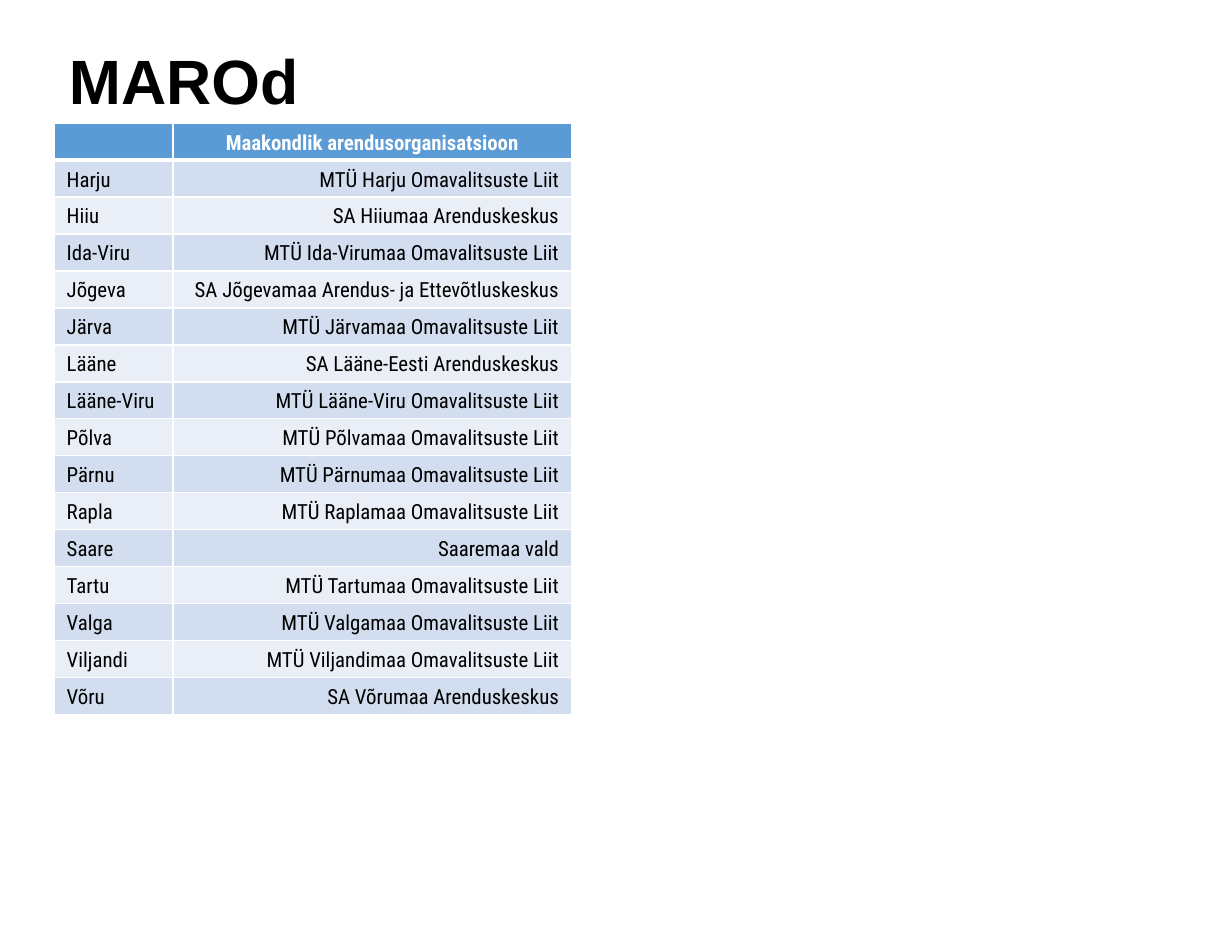
import pptx
import pptx.util
import pptx.dml.color
import pptx.enum.text
import pptx.oxml
import pptx.oxml.ns

Cm, Pt = pptx.util.Cm, pptx.util.Pt
RGBColor = pptx.dml.color.RGBColor
Align = pptx.enum.text.PP_ALIGN
Anchor = pptx.enum.text.MSO_ANCHOR

# Content
TITLE = "MAROd"
HEADER = ("", "Maakondlik arendusorganisatsioon")
COUNTIES = [
    ("Harju", "MTÜ Harju Omavalitsuste Liit"),
    ("Hiiu", "SA Hiiumaa Arenduskeskus"),
    ("Ida-Viru", "MTÜ Ida-Virumaa Omavalitsuste Liit"),
    ("Jõgeva", "SA Jõgevamaa Arendus- ja Ettevõtluskeskus"),
    ("Järva", "MTÜ Järvamaa Omavalitsuste Liit"),
    ("Lääne", "SA Lääne-Eesti Arenduskeskus"),
    ("Lääne-Viru", "MTÜ Lääne-Viru Omavalitsuste Liit"),
    ("Põlva", "MTÜ Põlvamaa Omavalitsuste Liit"),
    ("Pärnu", "MTÜ Pärnumaa Omavalitsuste Liit"),
    ("Rapla", "MTÜ Raplamaa Omavalitsuste Liit"),
    ("Saare", "Saaremaa vald"),
    ("Tartu", "MTÜ Tartumaa Omavalitsuste Liit"),
    ("Valga", "MTÜ Valgamaa Omavalitsuste Liit"),
    ("Viljandi", "MTÜ Viljandimaa Omavalitsuste Liit"),
    ("Võru", "SA Võrumaa Arenduskeskus"),
]
COLORS = {"text": "000000", "white": "FFFFFF", "header": "5B9BD5",
          "odd": "D2DEEF", "even": "EAEFF7"}
COLUMN_WIDTHS = (2.41, 8.09)
ROW_HEIGHT = 0.75


def color(name):
    return RGBColor.from_string(COLORS[name])


def set_font(para, name, size, bold, color_name):
    font = para.font
    font.name, font.size, font.bold = name, Pt(size), bold
    font.color.rgb = color(color_name)


def add_borders(cell, top, bottom):
    """Draw white borders; widths are in points."""
    properties = cell._tc.get_or_add_tcPr()
    for side, width in (("L", 1), ("R", 1), ("T", top), ("B", bottom)):
        properties.append(pptx.oxml.parse_xml(
            f'<a:ln{side} {pptx.oxml.ns.nsdecls("a")} w="{Pt(width)}">'
            f'<a:solidFill><a:srgbClr val="{COLORS["white"]}"/></a:solidFill>'
            f'</a:ln{side}>'))


def add_title(page):
    title = page.shapes.title
    title.left, title.top, title.width, title.height = Cm(1.4), Cm(0.9), Cm(22), Cm(1.8)
    frame = title.text_frame
    frame.text = TITLE
    frame.auto_size = pptx.enum.text.MSO_AUTO_SIZE.NONE
    frame.vertical_anchor = Anchor.TOP
    frame.margin_left = frame.margin_right = frame.margin_bottom = 0
    frame.margin_top = Cm(0.14)
    para = frame.paragraphs[0]
    para.alignment, para.line_spacing = Align.LEFT, 0.88
    set_font(para, "Arial", 36, True, "text")


def fill_cell(cell, text, row, column):
    is_header = row == 0
    add_borders(cell, 3 if row == 1 else 1, 3 if is_header else 1)
    cell.fill.solid()
    cell.fill.fore_color.rgb = color("header" if is_header else "odd" if row % 2 else "even")
    cell.vertical_anchor = Anchor.MIDDLE
    cell.margin_top = cell.margin_bottom = Cm(0.05)
    cell.text = text
    para = cell.text_frame.paragraphs[0]
    para.line_spacing = 1.1
    para.alignment = Align.CENTER if is_header else (Align.LEFT, Align.RIGHT)[column]
    set_font(para, "Roboto Condensed", 12, is_header, "white" if is_header else "text")
    if not text:
        # Keeps the empty cell from stretching its row
        para._p.get_or_add_endParaRPr().set("sz", "1200")


def add_county_table(page):
    rows = [HEADER] + COUNTIES
    table = page.shapes.add_table(
        len(rows), len(HEADER), Cm(1.1), Cm(2.5),
        Cm(sum(COLUMN_WIDTHS)), Cm(ROW_HEIGHT * len(rows))).table
    for column, width in zip(table.columns, COLUMN_WIDTHS):
        column.width = Cm(width)
    for row, texts in enumerate(rows):
        table.rows[row].height = Cm(ROW_HEIGHT)
        for column, text in enumerate(texts):
            fill_cell(table.cell(row, column), text, row, column)


def main():
    deck = pptx.Presentation()
    deck.slide_width, deck.slide_height = Cm(25), Cm(19)
    page = deck.slides.add_slide(deck.slide_layouts[5])
    add_title(page)
    add_county_table(page)
    deck.save("out.pptx")


if __name__ == "__main__":
    main()
